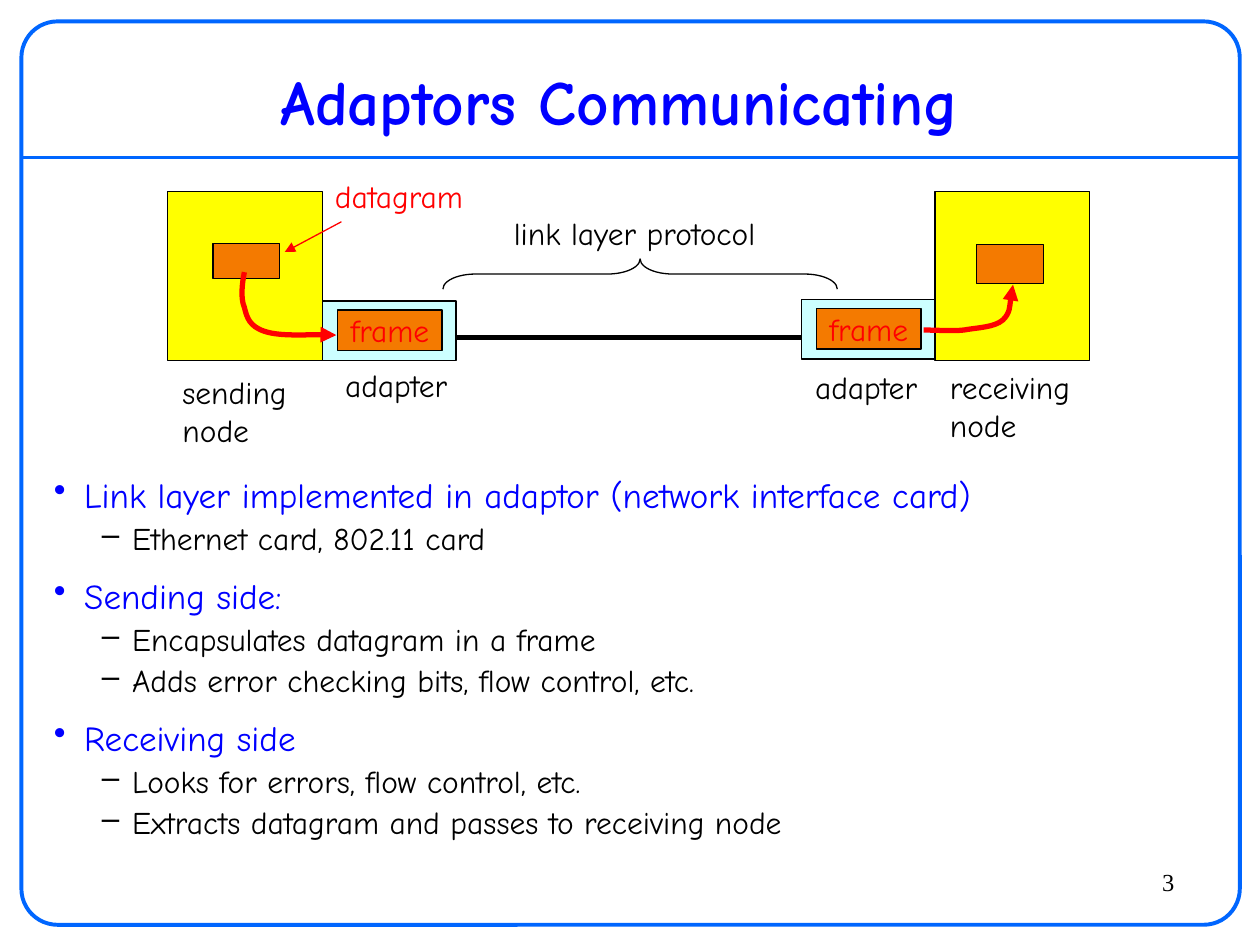
from lxml import etree
from pptx import Presentation
from pptx.dml.color import RGBColor
from pptx.enum.shapes import MSO_CONNECTOR, MSO_SHAPE
from pptx.enum.text import MSO_ANCHOR, PP_ALIGN
from pptx.oxml.ns import qn
from pptx.util import Emu, Pt

PX = 9144  # 100 px to the inch
BLUE = RGBColor(0x00, 0x00, 0xFF)
FRAME_BLUE = RGBColor(0x00, 0x66, 0xFF)
BLACK = RGBColor(0x00, 0x00, 0x00)
RED = RGBColor(0xFF, 0x00, 0x00)
YELLOW = RGBColor(0xFF, 0xFF, 0x00)
ORANGE = RGBColor(0xF4, 0x7A, 0x00)
PALE_CYAN = RGBColor(0xCC, 0xFF, 0xFF)

RECT, ROUND_RECT = MSO_SHAPE.RECTANGLE, MSO_SHAPE.ROUNDED_RECTANGLE
LEFT_BRACE = MSO_SHAPE.LEFT_BRACE
STRAIGHT = MSO_CONNECTOR.STRAIGHT
LEFT, CENTER, RIGHT = PP_ALIGN.LEFT, PP_ALIGN.CENTER, PP_ALIGN.RIGHT
TOP, MIDDLE = MSO_ANCHOR.TOP, MSO_ANCHOR.MIDDLE

OUTLINE = [
    ("Link layer implemented in adaptor (network interface card)",
     ["Ethernet card, 802.11 card"]),
    ("Sending side:",
     ["Encapsulates datagram in a frame",
      "Adds error checking bits, flow control, etc."]),
    ("Receiving side",
     ["Looks for errors, flow control, etc.",
      "Extracts datagram and passes to receiving node"]),
]


def px(*lengths):
    return [Emu(length * PX) for length in lengths]


def write(frame, text, size=18, color=BLACK, font="Comic Neue", bold=False,
          align=LEFT, anchor=TOP, wrap=False):
    """Fill a text frame, one paragraph for each line of text."""
    frame.word_wrap = wrap
    frame.vertical_anchor = anchor
    frame.text = text
    for paragraph in frame.paragraphs:
        paragraph.alignment = align
        style = paragraph.font
        style.size, style.name, style.bold = Pt(size), font, bold
        style.color.rgb = color


def set_bullet(paragraph, char, margin, hanging):
    properties = paragraph._p.get_or_add_pPr()
    properties.set("marL", str(margin * PX))
    properties.set("indent", str(-hanging * PX))
    etree.SubElement(properties, qn("a:buChar")).set("char", char)


class SlideBuilder:
    def __init__(self, slide):
        self.slide = slide
        self.shapes = slide.shapes

    def stroke(self, item, color, width, arrow=False):
        item.line.color.rgb = color
        item.line.width = Pt(width)
        if arrow:
            line = item.line._get_or_add_ln()
            etree.SubElement(line, qn("a:tailEnd")).set("type", "triangle")

    def shape(self, kind, box, fill=None, line=BLACK, width=0.75):
        item = self.shapes.add_shape(kind, *px(*box))
        item.shadow.inherit = False
        if fill is None:
            item.fill.background()
        else:
            item.fill.solid()
            item.fill.fore_color.rgb = fill
        self.stroke(item, line, width)
        return item

    def text(self, box, text, **style):
        frame = self.shapes.add_textbox(*px(*box)).text_frame
        write(frame, text, **style)
        return frame

    def line(self, start, end, color, width, arrow=False):
        item = self.shapes.add_connector(STRAIGHT, *px(*start, *end))
        self.stroke(item, color, width, arrow)
        etree.SubElement(item._element.spPr, qn("a:effectLst"))

    def curved_arrow(self, points):
        """Draw a Bézier chain: a start, then three points for each curve."""
        builder = self.shapes.build_freeform(*points[0], scale=PX)
        builder.add_line_segments(points[1:], close=False)
        item = builder.convert_to_shape()
        item.shadow.inherit = False
        item.fill.background()
        self.stroke(item, RED, 3, arrow=True)
        segments = list(item._element.iter(qn("a:lnTo")))
        outline = segments[0].getparent()
        for first in range(0, len(segments), 3):
            curve = etree.SubElement(outline, qn("a:cubicBezTo"))
            for segment in segments[first:first + 3]:
                curve.append(segment[0])
                outline.remove(segment)

    def adapter(self, left, top):
        self.shape(RECT, (left, top, 106, 47), PALE_CYAN)
        frame = self.shape(RECT, (left + 12, top + 7, 83, 32), ORANGE)
        write(frame.text_frame, "frame", color=RED, align=CENTER, anchor=MIDDLE)

    def node(self, left, datagram):
        self.shape(RECT, (left, 152, 123, 134), YELLOW)
        self.shape(RECT, datagram, ORANGE)

    def outline(self, box, topics):
        rows = []
        for topic, details in topics:
            rows.append((topic, 20, BLUE, 10, "•", 24))
            rows += [(detail, 18, BLACK, 2, "–", 62) for detail in details]
        frame = self.text(box, "\n".join(row[0] for row in rows), wrap=True)
        for paragraph, row in zip(frame.paragraphs, rows):
            _, size, color, before, char, margin = row
            paragraph.font.size = Pt(size)
            paragraph.font.color.rgb = color
            paragraph.space_before = Pt(before)
            paragraph.level = int(char == "–")
            set_bullet(paragraph, char, margin, 24)


def main():
    deck = Presentation()
    deck.slide_width, deck.slide_height = px(1000, 750)
    page = SlideBuilder(deck.slides.add_slide(deck.slide_layouts[6]))

    page.line((17, 125), (983, 125), FRAME_BLUE, 2.25)
    border = page.shape(ROUND_RECT, (17, 17, 967, 717), line=FRAME_BLUE, width=2.25)
    border.adjustments[0] = 0.04
    page.text((842, 683, 100, 42), "3", size=14, font="Times New Roman",
              align=RIGHT, wrap=True)
    page.text((33, 42, 917, 75), "Adaptors Communicating", size=36, color=BLUE,
              bold=True, align=CENTER, anchor=MIDDLE, wrap=True)
    page.outline((33, 371, 942, 350), OUTLINE)

    page.adapter(256, 239)
    page.line((361, 268), (637, 268), BLACK, 3)
    page.node(742, datagram=(775, 194, 53, 31))
    page.node(133, datagram=(169, 193, 53, 28))
    page.adapter(636, 238)

    page.line((271, 176), (226, 200), RED, 0.75, arrow=True)
    page.curved_arrow([(194, 216), (192, 226), (191, 237), (194, 244),
                       (196, 252), (198, 259), (210, 263),
                       (222, 267), (257, 265), (267, 266)])
    page.curved_arrow([(733, 262), (744, 262), (755, 263), (765, 262),
                       (776, 260), (789, 260), (796, 254),
                       (802, 248), (803, 230), (804, 226)])
    brace = page.shape(LEFT_BRACE, (496, 61, 24, 313))
    brace.rotation = 90
    brace.adjustments[0] = 1.08

    page.text((256, 136, 130, 40), "datagram", color=RED)
    page.text((398, 165, 230, 40), "link layer protocol")
    page.text((135, 291, 107, 70), "sending\nnode")
    page.text((264, 286, 111, 40), "adapter")
    page.text((637, 287, 111, 40), "adapter")
    page.text((744, 287, 125, 70), "receiving\nnode")

    deck.save("out.pptx")


if __name__ == "__main__":
    main()
